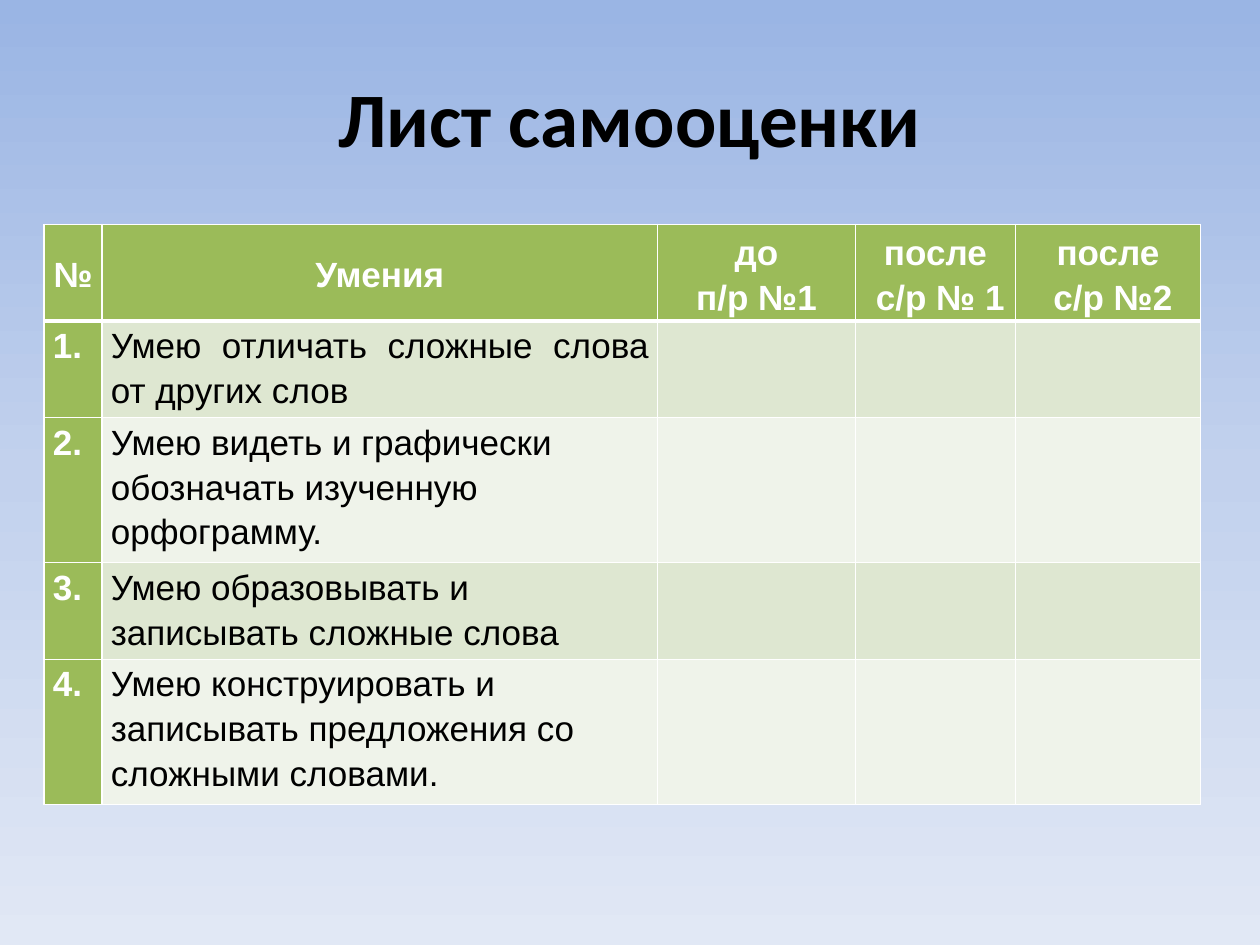
from copy import deepcopy
from dataclasses import dataclass

from lxml.etree import SubElement
from pptx import Presentation
from pptx.dml.color import RGBColor
from pptx.enum.text import MSO_ANCHOR, PP_ALIGN
from pptx.oxml.ns import qn
from pptx.util import Inches, Pt


@dataclass(frozen=True)
class Theme:
    background: tuple = ("9AB5E4", "C2D1ED", "E1E8F5")
    accent: str = "9BBB59"
    bands: tuple = ("DEE7D1", "EFF3EA")
    light: str = "FFFFFF"
    dark: str = "000000"
    title_font: str = "Calibri"
    body_font: str = "Arial"
    title_size: int = 44
    body_size: int = 20
    thin_line: int = 1
    thick_line: int = 3


THEME = Theme()

HEADERS = (("№",), ("Умения",), ("до", "п/р №1"),
           ("после", " с/р № 1"), ("после", " с/р №2"))
SKILLS = ("Умею отличать сложные слова от других слов ",
          "Умею видеть и графически обозначать изученную орфограмму.",
          "Умею образовывать и записывать сложные слова",
          "Умею конструировать и записывать предложения со сложными словами.")
COLUMN_WIDTHS = (0.46, 4.41, 1.57, 1.27, 1.47)
ROW_HEIGHTS = (0.71, 0.71, 1.07, 0.71, 1.07)


def paint_background(slide):
    fill = slide.background.fill
    fill.gradient()
    fill.gradient_angle = 270  # counter-clockwise: runs from top to bottom
    stop_list = slide.element.find(".//" + qn("a:gsLst"))
    stop_list.append(deepcopy(stop_list[-1]))
    for index, (stop, color) in enumerate(zip(fill.gradient_stops, THEME.background)):
        stop.position = index / 2
        stop.color.rgb = RGBColor.from_string(color)


def add_run(paragraph, text, font, size, color, bold):
    run = paragraph.add_run()
    run.text = text
    run.font.name = font
    run.font.size = Pt(size)
    run.font.bold = bold
    run.font.color.rgb = RGBColor.from_string(color)


def add_title(slide, text):
    shape = slide.shapes.add_textbox(Inches(0.5), Inches(0.3), Inches(9), Inches(1.25))
    frame = shape.text_frame
    frame.word_wrap = True
    frame.vertical_anchor = MSO_ANCHOR.MIDDLE
    paragraph = frame.paragraphs[0]
    paragraph.alignment = PP_ALIGN.CENTER
    add_run(paragraph, text, THEME.title_font, THEME.title_size, THEME.dark, True)


def set_borders(cell, top, bottom):
    properties = cell._tc.get_or_add_tcPr()
    widths = {"L": THEME.thin_line, "R": THEME.thin_line, "T": top, "B": bottom}
    for side, width in widths.items():
        line = SubElement(properties, qn(f"a:ln{side}"), w=str(Pt(width)))
        SubElement(SubElement(line, qn("a:solidFill")), qn("a:srgbClr"), val=THEME.light)


def style_cell(cell, color, top=THEME.thin_line, bottom=THEME.thin_line):
    set_borders(cell, top, bottom)
    cell.fill.solid()
    cell.fill.fore_color.rgb = RGBColor.from_string(color)
    cell.margin_left = cell.margin_right = Inches(0.07)
    cell.margin_top = cell.margin_bottom = 0


def write_cell(cell, lines, color, bold, alignment, space_after=0):
    frame = cell.text_frame
    for index, line in enumerate(lines):
        paragraph = frame.add_paragraph() if index else frame.paragraphs[0]
        paragraph.alignment = alignment
        paragraph.line_spacing = 1.15
        paragraph.space_after = Pt(space_after)
        add_run(paragraph, line, THEME.body_font, THEME.body_size, color, bold)


def add_skills_table(slide):
    table = slide.shapes.add_table(
        len(ROW_HEIGHTS), len(COLUMN_WIDTHS), Inches(0.35), Inches(1.78),
        Inches(sum(COLUMN_WIDTHS)), Inches(sum(ROW_HEIGHTS))).table
    for column, width in zip(table.columns, COLUMN_WIDTHS):
        column.width = Inches(width)
    for row, height in zip(table.rows, ROW_HEIGHTS):
        row.height = Inches(height)

    # Header row
    for column, lines in enumerate(HEADERS):
        cell = table.cell(0, column)
        style_cell(cell, THEME.accent, bottom=THEME.thick_line)
        cell.vertical_anchor = MSO_ANCHOR.MIDDLE
        write_cell(cell, lines, THEME.light, True, PP_ALIGN.CENTER,
                   10 if len(lines) == 1 else 0)

    # Numbered skills with empty cells for the marks
    for number, skill in enumerate(SKILLS, start=1):
        first = number == 1
        alignment = PP_ALIGN.JUSTIFY if first else PP_ALIGN.LEFT
        space_after = 10 if first else 0
        band = THEME.bands[(number - 1) % 2]
        for column in range(len(COLUMN_WIDTHS)):
            style_cell(table.cell(number, column), band if column else THEME.accent,
                       top=THEME.thick_line if first else THEME.thin_line)
        write_cell(table.cell(number, 0), (f"{number}.",), THEME.light, True,
                   alignment, space_after)
        write_cell(table.cell(number, 1), (skill,), THEME.dark, False,
                   alignment, space_after)


def main():
    presentation = Presentation()
    presentation.slide_width = Inches(10)
    presentation.slide_height = Inches(7.5)
    slide = presentation.slides.add_slide(presentation.slide_layouts[6])
    paint_background(slide)
    add_title(slide, "Лист самооценки")
    add_skills_table(slide)
    presentation.save("out.pptx")


if __name__ == "__main__":
    main()
